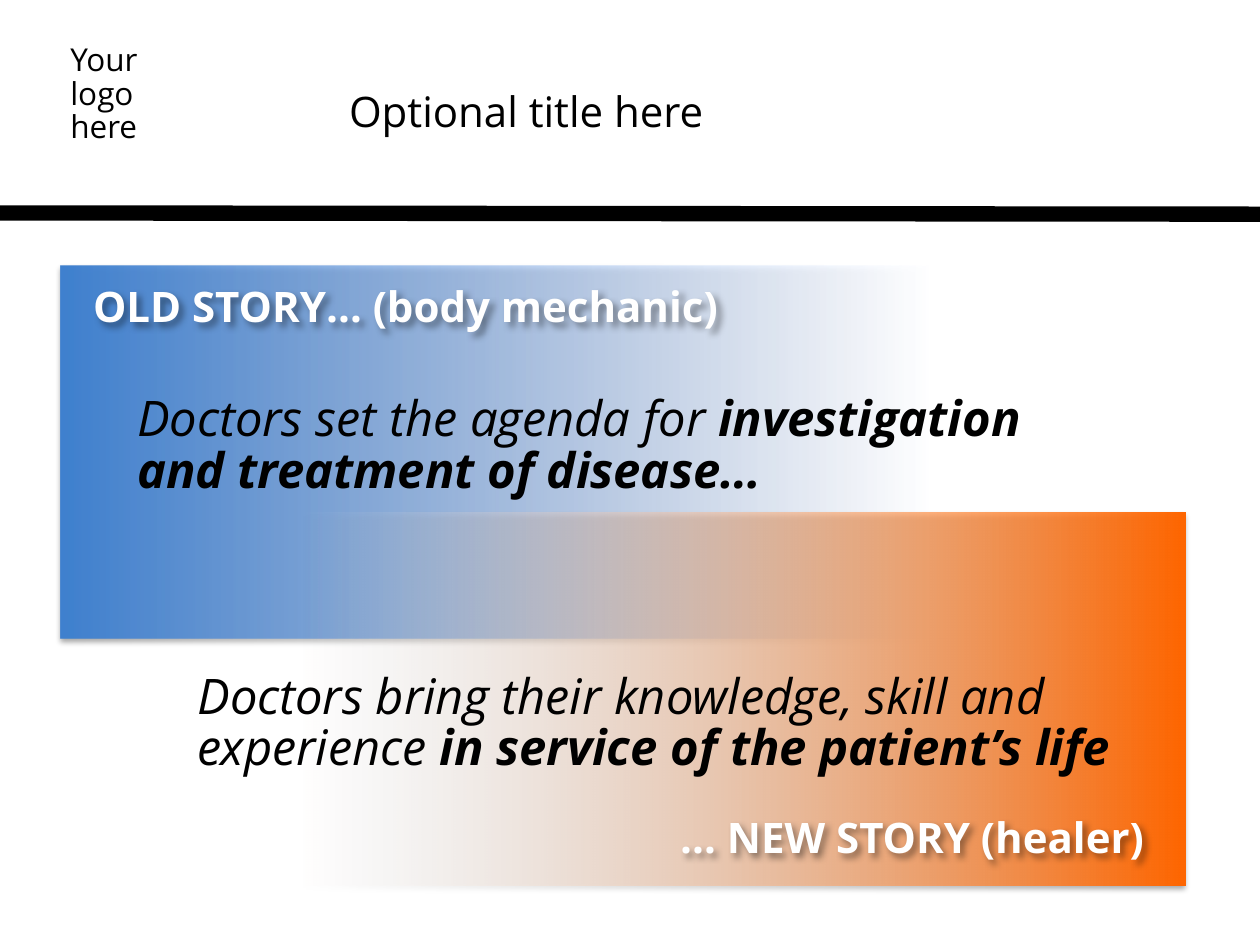
from pptx import Presentation
from pptx.dml.color import RGBColor
from pptx.enum.shapes import MSO_CONNECTOR as CONN, MSO_SHAPE as SHAPE
from pptx.enum.text import MSO_ANCHOR as ANCHOR, PP_ALIGN as ALIGN
from pptx.oxml import parse_xml
from pptx.oxml.ns import nsdecls
from pptx.util import Inches, Pt

BLUE = RGBColor(0x3F, 0x80, 0xCE)
PALE_BLUE = RGBColor(0xA4, 0xC4, 0xFF)
ORANGE = RGBColor(0xFF, 0x66, 0x00)
WHITE = RGBColor(0xFF, 0xFF, 0xFF)
BLACK = RGBColor(0, 0, 0)
FONT = "Open Sans"
CARD_W, CARD_H = 7.04, 2.96
CARD_SHADOW = dict(blur=3.1, dist=1.8, angle=90, alpha=35)
TEXT_SHADOW = dict(blur=4, dist=3, angle=45, alpha=40)


def add_shadow(sp, blur, dist, angle, alpha):
    """Give a shape an outer black shadow."""
    sp.shadow.inherit = False
    sp._element.spPr.find(".//{*}effectLst").append(parse_xml(
        f'<a:outerShdw {nsdecls("a")} blurRad="{Pt(blur)}" dist="{Pt(dist)}" '
        f'dir="{angle * 60000}" algn="tl" rotWithShape="0"><a:srgbClr val="{BLACK}">'
        f'<a:alpha val="{alpha * 1000}"/></a:srgbClr></a:outerShdw>'))


def fade_fill(sp, start, end, stop):
    """Fill a shape with a colour fading to transparent along its width."""
    sp._element.spPr.find("{*}prstGeom").addnext(parse_xml(
        f'<a:gradFill {nsdecls("a")} rotWithShape="1"><a:gsLst>'
        f'<a:gs pos="0"><a:srgbClr val="{start}"/></a:gs>'
        f'<a:gs pos="{stop * 1000}"><a:srgbClr val="{end}"><a:alpha val="0"/></a:srgbClr></a:gs>'
        f'</a:gsLst><a:lin ang="0" scaled="0"/></a:gradFill>'))


def write(sp, box, runs, size, color=BLACK):
    """Place a text shape in a box and write its (text, format) runs."""
    sp.left, sp.top, sp.width, sp.height = map(Inches, box)
    tf = sp.text_frame
    frame = dict(word_wrap=True, vertical_anchor=ANCHOR.TOP, margin_left=Inches(0.1),
                 margin_right=Inches(0.1), margin_top=Inches(0.08), margin_bottom=Inches(0.02))
    for name, value in frame.items():
        setattr(tf, name, value)
    p = tf.paragraphs[0]
    p.alignment, p.line_spacing = ALIGN.LEFT, 0.88
    for text, fmt in runs:
        r = p.add_run()
        r.text = text
        for name, value in dict(name=FONT, size=Pt(size), **fmt).items():
            setattr(r.font, name, value)
        r.font.color.rgb = color


def add_header(s, w, h):
    """Build the logo note, the title and the rule below them."""
    rule = s.shapes.add_connector(CONN.STRAIGHT, *map(Inches, (-0.02 * w, 1.69, 1.02 * w, 1.7)))
    rule.line.color.rgb, rule.line.width = BLACK, Pt(8.75)
    rule._element.spPr.append(parse_xml(f'<a:effectLst {nsdecls("a")}/>'))
    note = s.shapes.add_textbox(0, 0, 0, 0)
    write(note, (0.46, 0.28, 1.17, 1.01), [("Your logo here", {})], 18)
    write(s.shapes.title, (2.67, 0.65, 3.09, 0.5), [("Optional title here", {})], 24)


def add_card(s, x, y, start, end, stop, flip=False):
    """Build one fading card at a corner."""
    sp = s.shapes.add_shape(SHAPE.RECTANGLE, *map(Inches, (x, y, CARD_W, CARD_H)))
    fade_fill(sp, start, end, stop)
    sp.line.fill.background()
    add_shadow(sp, **CARD_SHADOW)
    if flip:
        sp._element.spPr.find("{*}xfrm").set("flipH", "1")


def add_story(s, x, y, heading, heading_box, plain, strong, body_box):
    """Write a card's heading and statement, in boxes relative to its corner."""
    def placed(box):
        return x + box[0], y + box[1], box[2], box[3]

    head = s.shapes.add_textbox(0, 0, 0, 0)
    write(head, placed(heading_box), [(heading, dict(bold=True))], 24, WHITE)
    add_shadow(head, **TEXT_SHADOW)
    body = s.shapes.add_textbox(0, 0, 0, 0)
    runs = [(plain, dict(italic=True)), (strong, dict(italic=True, bold=True))]
    write(body, placed(body_box), runs, 28)


def main():
    """Build the slide and save it."""
    w, h = 10, 7.5
    prs = Presentation()
    prs.slide_width, prs.slide_height = Inches(w), Inches(h)
    s = prs.slides.add_slide(prs.slide_layouts[5])
    add_header(s, w, h)
    old, new = (0.48, 2.11), (2.37, 4.07)
    add_card(s, *old, BLUE, PALE_BLUE, 98)
    add_card(s, *new, ORANGE, WHITE, 100, flip=True)
    add_story(s, *old, "OLD STORY… (body mechanic)", (0.16, 0.09, 5.77, 0.5),
              "Doctors set the agenda for ", "investigation and treatment of disease…",
              (0.51, 0.95, 7.32, 1.04))
    add_story(s, *new, "… NEW STORY (healer)", (2.93, 2.34, 4.29, 0.5),
              "Doctors bring their knowledge, skill and experience ",
              "in service of the patient’s life", (-0.9, 1.19, 7.66, 1.04))
    prs.save("out.pptx")


if __name__ == "__main__":
    main()
